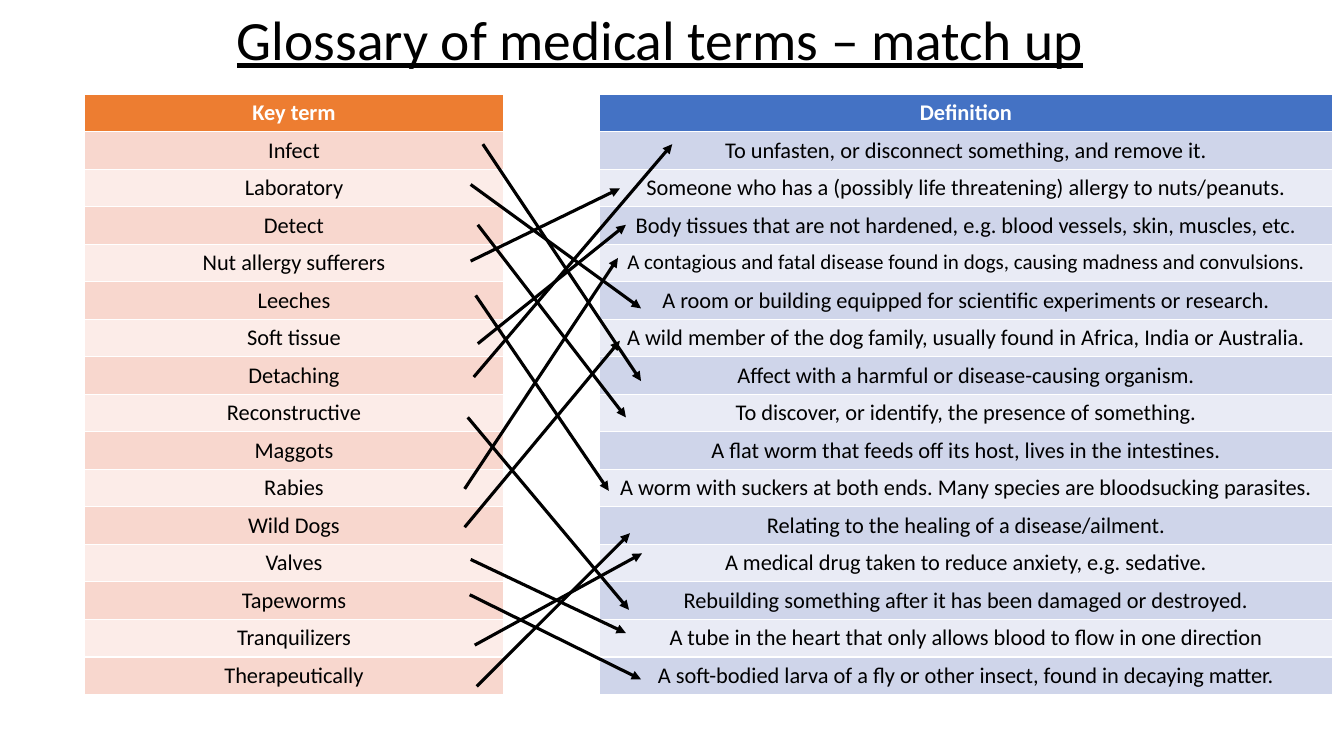
from lxml import etree
from pptx import Presentation
from pptx import util as u
from pptx.dml.color import RGBColor
from pptx.enum import shapes, text
from pptx.oxml import ns

COLOURS = {
    "black": "000000", "white": "FFFFFF",
    "orange": "ED7D31", "orange_mid": "F8D7CE", "orange_pale": "FCECE8",
    "blue": "4472C4", "blue_mid": "CFD5EA", "blue_pale": "E9EBF5",
}
ROW_HEIGHT = 26.8
TABLE_TOP = 67.4

KEY_TERMS = [
    "Infect", "Laboratory", "Detect", "Nut allergy sufferers", "Leeches",
    "Soft tissue", "Detaching", "Reconstructive", "Maggots", "Rabies",
    "Wild Dogs", "Valves", "Tapeworms", "Tranquilizers", "Therapeutically",
]
LONGEST_DEFINITION = "A contagious and fatal disease found in dogs, causing madness and convulsions."
DEFINITIONS = [
    "To unfasten, or disconnect something, and remove it.",
    "Someone who has a (possibly life threatening) allergy to nuts/peanuts.",
    "Body tissues that are not hardened, e.g. blood vessels, skin, muscles, etc.",
    LONGEST_DEFINITION,
    "A room or building equipped for scientific experiments or research.",
    "A wild member of the dog family, usually found in Africa, India or Australia.",
    "Affect with a harmful or disease-causing organism.",
    "To discover, or identify, the presence of something.",
    "A flat worm that feeds off its host, lives in the intestines.",
    "A worm with suckers at both ends. Many species are bloodsucking parasites.",
    "Relating to the healing of a disease/ailment.",
    "A medical drug taken to reduce anxiety, e.g. sedative.",
    "Rebuilding something after it has been damaged or destroyed.",
    "A tube in the heart that only allows blood to flow in one direction",
    "A soft-bodied larva of a fly or other insect, found in decaying matter.",
]

# Start and end of each matching arrow, in points
ARROWS = [
    (335.5, 424.8, 457.9, 485.3),
    (331.9, 376.6, 442.8, 243.4),
    (340.6, 490.3, 450, 380.9),
    (339.1, 460.8, 458.6, 395.3),
    (344.9, 103, 457.9, 272.2),
    (336.2, 399.6, 447.1, 452.2),
    (331.9, 349.2, 441.4, 184.3),
    (334.1, 298.1, 449.3, 435.6),
    (338.4, 269.3, 480.2, 103),
    (341.3, 245.5, 447.1, 160.6),
    (339.8, 211, 434.9, 350.6),
    (336.2, 186.5, 442.8, 134.6),
    (341.3, 160.6, 447.1, 298.1),
    (336.2, 131.8, 457.9, 220.3),
]


def write_text(frame, wording, size=16, colour="black", bold=False,
               underline=False, align=text.PP_ALIGN.CENTER):
    frame.text = wording
    paragraph = frame.paragraphs[0]
    paragraph.alignment = align
    font = paragraph.runs[0].font
    font.name = "Calibri"
    font.size = u.Pt(size)
    font.bold = bold
    font.underline = underline
    font.color.rgb = RGBColor.from_string(COLOURS[colour])
    return paragraph


presentation = Presentation()
presentation.slide_width = u.Pt(960)
presentation.slide_height = u.Pt(540)
slide = presentation.slides.add_slide(presentation.slide_layouts[5])

# Title
title = slide.shapes.title
title.left, title.top = u.Pt(162), u.Pt(6.5)
title.width, title.height = u.Pt(750), u.Pt(47.5)
title.text_frame.vertical_anchor = text.MSO_ANCHOR.MIDDLE
heading = write_text(title.text_frame, "Glossary of medical terms – match up", size=39.6,
                     underline=True, align=text.PP_ALIGN.LEFT)
heading.line_spacing = 0.9

# Definition and key term tables; the default style supplies the white borders
for header, entries, left, width, hue in [
    ("Definition", DEFINITIONS, 428, 524, "blue"),
    ("Key term", KEY_TERMS, 60, 300, "orange"),
]:
    rows = [header, *entries]
    table = slide.shapes.add_table(len(rows), 1, u.Pt(left), u.Pt(TABLE_TOP), u.Pt(width),
                                   u.Pt(ROW_HEIGHT * len(rows))).table
    for index, wording in enumerate(rows):
        table.rows[index].height = u.Pt(ROW_HEIGHT)
        cell = table.cell(index, 0)
        is_header = index == 0
        band = hue if is_header else hue + ("_mid" if index % 2 else "_pale")
        cell.fill.solid()
        cell.fill.fore_color.rgb = RGBColor.from_string(COLOURS[band])
        write_text(cell.text_frame, wording, bold=is_header,
                   size=15 if wording == LONGEST_DEFINITION else 16,
                   colour="white" if is_header else "black")

# Matching arrows
for points in ARROWS:
    arrow = slide.shapes.add_connector(shapes.MSO_CONNECTOR.STRAIGHT, *map(u.Pt, points))
    arrow.line.width = u.Pt(2.25)
    arrow.line.color.rgb = RGBColor.from_string(COLOURS["black"])
    etree.SubElement(arrow.line._get_or_add_ln(), ns.qn("a:tailEnd"), type="triangle")
    etree.SubElement(arrow._element.spPr, ns.qn("a:effectLst"))

presentation.save("out.pptx")
